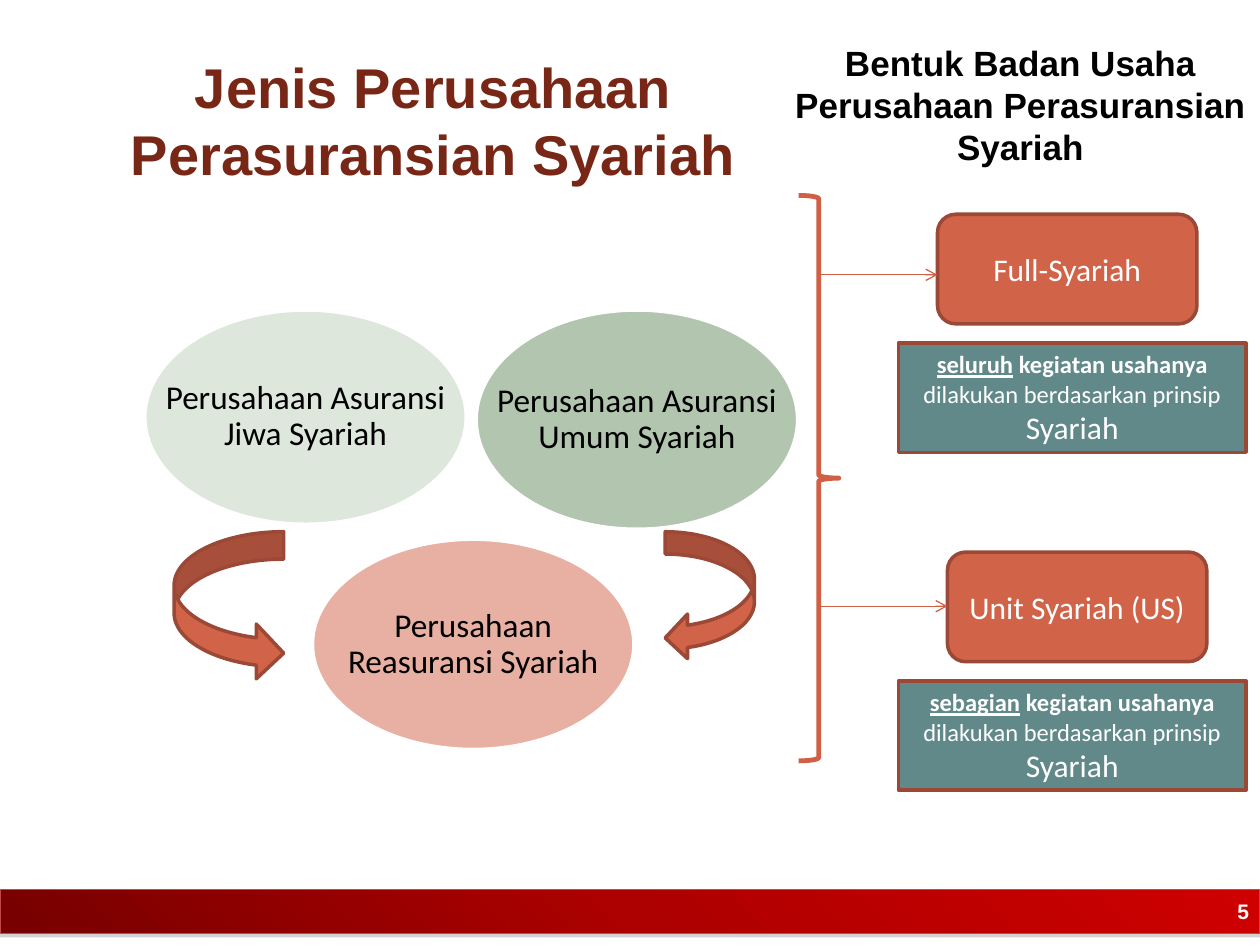
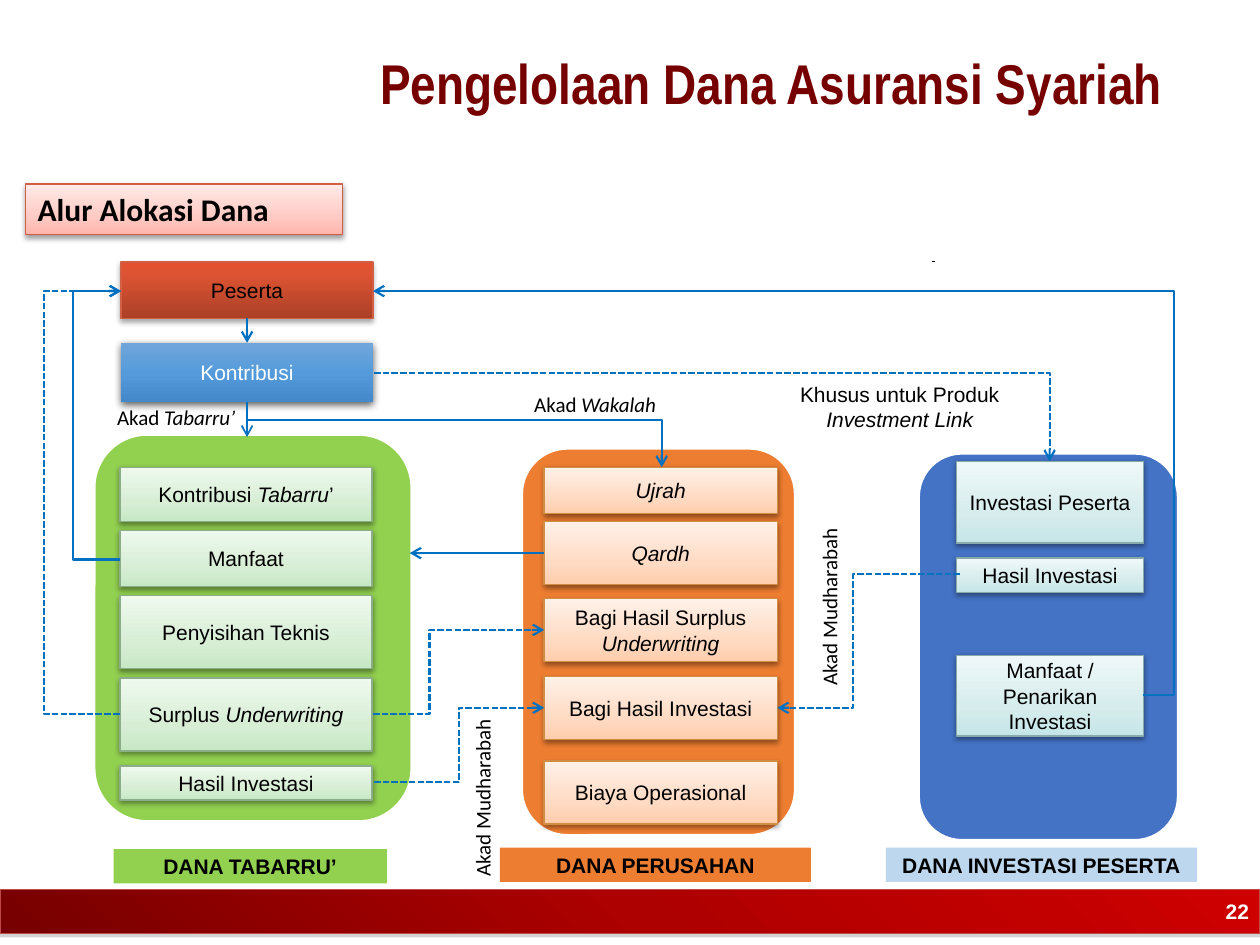
from lxml import etree
from pptx import Presentation
from pptx.dml.color import RGBColor
from pptx.enum import dml, shapes, text
from pptx.oxml import ns
from pptx.util import Cm, Pt

SHAPE = shapes.MSO_SHAPE
LEFT, CENTER, RIGHT = text.PP_ALIGN.LEFT, text.PP_ALIGN.CENTER, text.PP_ALIGN.RIGHT
MIDDLE, TOP = text.MSO_ANCHOR.MIDDLE, text.MSO_ANCHOR.TOP

RUST, RUST_EDGE, RUST_LINE, TEAL = "D16349", "9B4936", "D05F44", "61898A"
BLACK, WHITE, BLUE = "000000", "FFFFFF", "0070C0"
BAND = ([(0, "770000"), (50, "AD0000"), (100, "CE0000")], 315)
RED_BOX = ([(0, "AB4027"), (80, "DE5433"), (100, "E35230")], 270)
BLUE_BOX = ([(0, "71A6DB"), (50, "559BDB"), (100, "448ACA")], 90)
PINK_BOX = ([(0, "FFB5AC"), (35, "FFCAC4"), (100, "FFEBE8")], 270)
GREEN_BOX = ([(0, "C7E8C4"), (35, "D7EED5"), (100, "EFF9EE")], 270)
ORANGE_BOX = ([(0, "FFCDAC"), (35, "FFDBC4"), (100, "FFF1E8")], 270)
AQUA_BOX = ([(0, "C5E6E7"), (35, "D6ECED"), (100, "EFF8F9")], 270)
SOFT = (BLACK, 38, 3.1, 1.6)

COMPANIES = [
    ((2.92, 6.25, 6.48, 4.32), "BCD0BA", "Perusahaan Asuransi Jiwa Syariah"),
    ((6.3, 10.87, 6.48, 4.24), RUST, "Perusahaan Reasuransi Syariah"),
    ((9.6, 6.25, 6.48, 4.42), "648C61", "Perusahaan Asuransi Umum Syariah"),
]
FORMS = [
    ("Full-Syariah", "seluruh", 18.9, 4.32, 5.54),
    ("Unit Syariah (US)", "sebagian", 19.1, 11.13, 12.22),
]
CURVED_ARROWS = [
    (SHAPE.CURVED_RIGHT_ARROW, (3.51, 10.72, 2.21, 3)),
    (SHAPE.CURVED_LEFT_ARROW, (13.41, 10.72, 1.8, 2.59)),
]

FUNDS = [
    dict(name="DANA PERUSAHAN", name_box=(10.08, 17.09, 6.27, 0.69), name_fill="ED7D31",
         panel=(10.52, 9.04, 5.51, 7.8), fill="ED7D31",
         x=10.97, w=4.7, box_fill=ORANGE_BOX, edge="D08D44",
         boxes=[(9.42, 0.94, "*Ujrah*"), (10.52, 1.27, "*Qardh*"),
                (12.07, 1.27, "Bagi Hasil Surplus *Underwriting*"),
                (13.64, 1.27, "Bagi Hasil Investasi"), (15.34, 1.27, "Biaya Operasional")]),
    dict(name="DANA INVESTASI PESERTA", name_box=(17.86, 17.09, 6.27, 0.69), name_fill="BDD7EE",
         panel=(18.52, 9.14, 5.23, 7.8), fill="4472C4",
         x=19.28, w=3.78, box_fill=AQUA_BOX, edge="88AAAB",
         boxes=[(9.3, 1.65, "Investasi Peserta"), (11.25, 0.69, "Hasil Investasi"),
                (13.21, 1.63, "Manfaat / Penarikan Investasi")]),
    dict(name="DANA TABARRU’", name_box=(2.29, 17.12, 5.51, 0.69), name_fill="92D050",
         panel=(1.9, 8.76, 6.4, 7.8), fill="92D050",
         x=2.42, w=5.08, box_fill=GREEN_BOX, edge="8BAD88",
         boxes=[(9.42, 1.09, "Kontribusi *Tabarru*’"), (10.69, 1.14, "Manfaat"),
                (12.01, 1.47, "Penyisihan Teknis"), (13.67, 1.47, "Surplus *Underwriting*"),
                (15.44, 0.69, "Hasil Investasi")]),
]
STRAIGHT_FLOWS = [
    ((4.98, 6.42, 4.98, 6.91), 1.25),
    ((4.98, 8.1, 4.98, 8.81), 1),
    ((10.97, 11.15, 8.26, 11.15), 1.25),
]
CORNER_FLOWS = [
    ((4.95, 8.46, 13.34, 9.42), False),
    ((7.54, 7.52, 21.16, 9.3), True),
]
STEP_FLOWS = [
    ((7.52, 14.4, 10.97, 12.7), 8.66, True),
    ((2.41, 14.4, 2.44, 5.87), 0.89, True),
    ((7.54, 15.77, 10.97, 14.27), 9.25, True),
    ((19.35, 11.58, 15.67, 14.27), 17.2, True),
    ((23.04, 14.02, 7.52, 5.87), 23.67, False),
    ((2.41, 11.28, 2.44, 5.87), 1.47, False),
]
LABELS = [
    ((15.6, 7.57, 5.08, 1.17), "Khusus untuk Produk *Investment Link*", "Arial", CENTER, 0),
    ((14.66, 11.63, 4.11, 0.76), "Akad Mudharabah", "Calibri", LEFT, 270),
    ((7.67, 15.49, 4.11, 0.76), "Akad Mudharabah", "Calibri", LEFT, 270),
    ((2.11, 8.03, 4.98, 0.69), "Akad *Tabarru’*", "Calibri", LEFT, 0),
    ((10.52, 7.77, 4.78, 0.69), "Akad *Wakalah*", "Calibri", LEFT, 0),
]


def rgb(value):
    return RGBColor.from_string(value)


def sub(parent, tag, **attrs):
    return etree.SubElement(parent, ns.qn(tag), {k: str(v) for k, v in attrs.items()})


def write(sp, content, size, font="Arial", color=BLACK, bold=False, align=CENTER, anchor=MIDDLE):
    tf = sp.text_frame
    tf.word_wrap = True
    tf.auto_size = text.MSO_AUTO_SIZE.NONE
    tf.vertical_anchor = anchor
    p = tf.paragraphs[0]
    p.alignment = align
    f = p.font
    f.name, f.size, f.bold, f.color.rgb = font, Pt(size), bold, rgb(color)
    if isinstance(content, str):
        content = [(part, {"italic": True} if i % 2 else {})
                   for i, part in enumerate(content.split("*")) if part]
    for part, style in content:
        r = p.add_run()
        r.text = part
        for key, value in style.items():
            setattr(r.font, key, value)
    return p


def paint(sp, fill):
    if fill is None:
        sp.fill.background()
    elif isinstance(fill, str):
        sp.fill.solid()
        sp.fill.fore_color.rgb = rgb(fill)
    else:
        stops, angle = fill
        sp.fill.gradient()
        sp.fill.gradient_angle = 360 - angle
        gs_list = sp._element.spPr.find(".//" + ns.qn("a:gsLst"))
        gs_list.clear()
        for pos, color in stops:
            sub(sub(gs_list, "a:gs", pos=pos * 1000), "a:srgbClr", val=color)


def add_shape(s, kind, box, fill=None, line=None, width=0.75, shadow=None, alpha=None):
    sp = s.shapes.add_shape(kind, *map(Cm, box))
    sp.shadow.inherit = False
    paint(sp, fill)
    if line:
        sp.line.color.rgb = rgb(line)
        sp.line.width = Pt(width)
    else:
        sp.line.fill.background()
    spPr = sp._element.spPr
    if alpha:
        sub(spPr.find(ns.qn("a:solidFill"))[0], "a:alpha", val=alpha * 1000)
    if shadow:
        color, opacity, blur, dist = shadow
        outer = sub(spPr.find(ns.qn("a:effectLst")), "a:outerShdw", blurRad=Pt(blur),
                    dist=Pt(dist), dir=5400000, rotWithShape=0)
        sub(sub(outer, "a:srgbClr", val=color), "a:alpha", val=opacity * 1000)
    return sp


def add_text(s, box, content, size, rotation=0, **style):
    sp = s.shapes.add_textbox(*map(Cm, box))
    sp.rotation = rotation
    return sp, write(sp, content, size, **style)


def add_line(s, ends, color, width, kind=shapes.MSO_CONNECTOR.STRAIGHT, dash=None, arrow=True):
    c = s.shapes.add_connector(kind, *map(Cm, ends))
    c.line.color.rgb = rgb(color)
    c.line.width = Pt(width)
    if dash:
        c.line.dash_style = dash
    if arrow:
        sub(c.line._get_or_add_ln(), "a:tailEnd", type="arrow")
    sub(c._element.spPr, "a:effectLst")
    return c


def add_elbow(s, ends, dashed, via=None):
    dash = dml.MSO_LINE.SQUARE_DOT if dashed else None
    c = add_line(s, ends, BLUE, 1.25, shapes.MSO_CONNECTOR.ELBOW, dash)
    geom = c._element.spPr.find(ns.qn("a:prstGeom"))
    if via is None:
        geom.set("prst", "bentConnector2")
        return
    x1, _, x2, _ = ends
    guides = geom.find(ns.qn("a:avLst"))
    if guides is None:
        guides = sub(geom, "a:avLst")
    sub(guides, "a:gd", name="adj1", fmla=f"val {round((via - x1) / (x2 - x1) * 100000)}")


def new_slide(prs, title, box, number, font, color, align):
    s = prs.slides.add_slide(prs.slide_layouts[5])
    sp = s.shapes.title
    sp.left, sp.top, sp.width, sp.height = map(Cm, box)
    write(sp, title, 32, font, color, True, align)
    add_shape(s, SHAPE.RECTANGLE, (0, 17.93, 25.4, 0.89), BAND, "BE4B48",
              shadow=("808080", 35, 0, 1.8))
    add_text(s, (19.51, 17.91, 5.92, 0.91), number, 12, color=WHITE, bold=True, align=RIGHT)
    return s


def build_company_types(prs):
    s = new_slide(prs, "Jenis Perusahaan Perasuransian Syariah", (1.7, 1.52, 14.07, 1.78),
                  "5", "Arial", "782616", CENTER)
    for box, fill, name in COMPANIES:
        add_shape(s, SHAPE.OVAL, box, fill, WHITE, 2, alpha=50)
        sp, p = add_text(s, box, name, 19, font="Calibri")
        tf = sp.text_frame
        tf.margin_left = tf.margin_right = tf.margin_top = tf.margin_bottom = Cm(0.2)
        p.line_spacing = 0.9
    add_shape(s, SHAPE.RIGHT_BRACE, (16.1, 3.94, 0.81, 11.4), line=RUST_LINE, width=2.75)
    add_text(s, (15.77, 0.91, 9.6, 2.39), "Bentuk Badan Usaha Perusahaan Perasuransian Syariah",
             20, bold=True)
    for name, scope, x, y, arrow_y in FORMS:
        sp = add_shape(s, SHAPE.ROUNDED_RECTANGLE, (x, y, 5.23, 2.21), RUST, RUST_EDGE, 2)
        write(sp, name, 18, "Calibri", WHITE)
        sp = add_shape(s, SHAPE.RECTANGLE, (18.11, y + 2.6, 7.01, 2.2), TEAL, RUST_EDGE, 2)
        write(sp, [(scope, {"bold": True, "underline": True}),
                   (" kegiatan usahanya", {"bold": True}),
                   (" dilakukan berdasarkan prinsip ", {}),
                   ("Syariah", {"size": Pt(18)})], 14, "Calibri", WHITE)
        add_line(s, (16.51, arrow_y, x, arrow_y), RUST_LINE, 0.75)
    for kind, box in CURVED_ARROWS:
        add_shape(s, kind, box, RUST, RUST_EDGE, 2)


def build_fund_flow(prs):
    s = new_slide(prs, "Pengelolaan Dana Asuransi Syariah", (2.31, 0.76, 21.39, 1.78),
                  "22", "Arial Narrow", "760000", RIGHT)
    sp = add_shape(s, SHAPE.RECTANGLE, (0.51, 3.71, 6.4, 1.02), PINK_BOX, RUST_LINE, shadow=SOFT)
    write(sp, "Alur Alokasi Dana", 18, "Calibri", bold=True, align=LEFT)
    sp = add_shape(s, SHAPE.RECTANGLE, (2.44, 5.28, 5.08, 1.14), RED_BOX, RUST_LINE,
                   shadow=(BLACK, 35, 3.1, 1.8))
    write(sp, "Peserta", 12)
    sp = add_shape(s, SHAPE.RECTANGLE, (2.44, 6.91, 5.08, 1.19), BLUE_BOX,
                   shadow=(BLACK, 63, 4.5, 1.5))
    write(sp, "Kontribusi", 12, color=WHITE)
    for fund in FUNDS:
        add_shape(s, SHAPE.ROUNDED_RECTANGLE, fund["panel"], fund["fill"], WHITE, 1.5)
        for y, h, name in fund["boxes"]:
            sp = add_shape(s, SHAPE.RECTANGLE, (fund["x"], y, fund["w"], h),
                           fund["box_fill"], fund["edge"], shadow=SOFT)
            write(sp, name, 12)
        sp = add_shape(s, SHAPE.RECTANGLE, fund["name_box"], fund["name_fill"])
        write(sp, fund["name"], 12, bold=True)
    for ends, width in STRAIGHT_FLOWS:
        add_line(s, ends, BLUE, width)
    for ends, dashed in CORNER_FLOWS:
        add_elbow(s, ends, dashed)
    for ends, via, dashed in STEP_FLOWS:
        add_elbow(s, ends, dashed, via)
    add_line(s, (18.82, 5.26, 18.82, 5.28), BLACK, 1.5, dash=dml.MSO_LINE.DASH, arrow=False)
    for box, label, font, align, rotation in LABELS:
        add_text(s, box, label, 12, rotation, font=font, align=align, anchor=TOP)


def main():
    prs = Presentation()
    prs.slide_width, prs.slide_height = Cm(25.4), Cm(19.05)
    build_company_types(prs)
    build_fund_flow(prs)
    prs.save("out.pptx")


if __name__ == "__main__":
    main()
